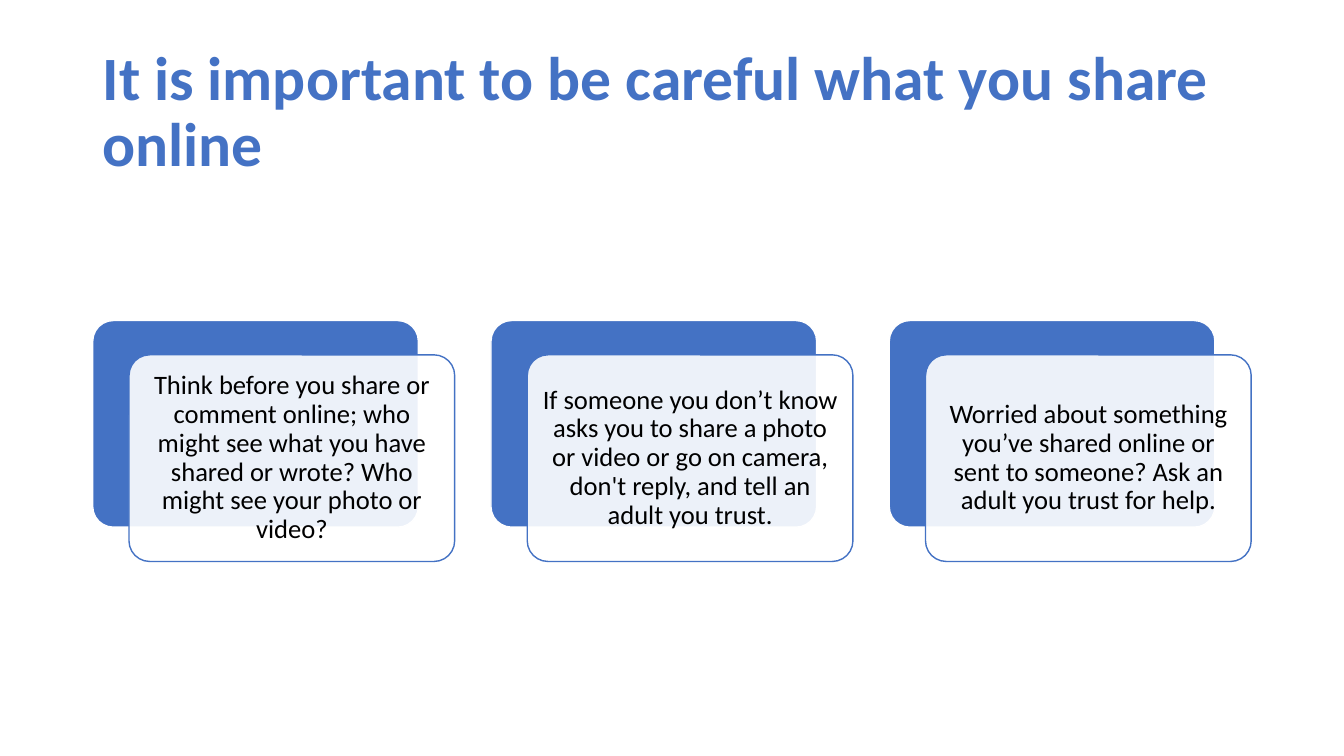
from pptx import Presentation
from pptx.dml.color import RGBColor
from pptx.enum.shapes import MSO_SHAPE
from pptx.enum.text import MSO_ANCHOR, PP_ALIGN
from pptx.oxml.ns import qn
from pptx.util import Inches, Pt
from lxml import etree

ROUNDED = MSO_SHAPE.ROUNDED_RECTANGLE
MIDDLE = MSO_ANCHOR.MIDDLE
LEFT, CENTER = PP_ALIGN.LEFT, PP_ALIGN.CENTER

FONT = "Calibri"
COLORS = {"blue": "4472C4", "white": "FFFFFF", "black": "000000"}
TITLE = "It is important to be careful what you share online"
TIPS = [
    "Think before you share or comment online; who might see what you have "
    "shared or wrote? Who might see your photo or video?",
    "If someone you don’t know asks you to share a photo or video or go on "
    "camera, don't reply, and tell an adult you trust.",
    "Worried about something you’ve shared online or sent to someone? "
    "Ask an adult you trust for help.",
]


def rgb(name):
    return RGBColor.from_string(COLORS[name])


def add_text(shapes, box, text, size, color, align=LEFT, bold=False, inset=None):
    tb = shapes.add_textbox(*map(Inches, box))
    tf = tb.text_frame
    tf.word_wrap = True
    tf.vertical_anchor = MIDDLE
    if inset is not None:
        tf.margin_left = tf.margin_right = Inches(inset)
        tf.margin_top = tf.margin_bottom = Inches(inset)
    p = tf.paragraphs[0]
    p.alignment = align
    p.line_spacing = 0.9
    r = p.add_run()
    r.text = text
    r.font.name = FONT
    r.font.size = Pt(size)
    r.font.bold = bold
    r.font.color.rgb = rgb(color)


def add_panel(shapes, box, fill, line, opacity=100):
    sp = shapes.add_shape(ROUNDED, *map(Inches, box))
    sp.adjustments[0] = 0.1
    sp.shadow.inherit = False
    sp.fill.solid()
    sp.fill.fore_color.rgb = rgb(fill)
    sp.line.color.rgb = rgb(line)
    sp.line.width = Pt(1)
    if opacity < 100:
        color = sp.fill._xPr.find(qn("a:solidFill"))[0]
        etree.SubElement(color, qn("a:alpha")).set("val", str(opacity * 1000))


def add_title(s, box):
    add_text(s.shapes, box, TITLE, 44, "blue", bold=True)


def add_tip_card(shapes, box, tip):
    x, y, w, h = box
    dx, dy, pad = 0.36, 0.34, 0.06
    pw, ph = w - dx, h - dy
    add_panel(shapes, (x, y, pw, ph), "blue", "white")
    add_panel(shapes, (x + dx, y + dy, pw, ph), "white", "blue", opacity=90)
    text_box = (x + dx + pad, y + dy + pad, pw - 2 * pad, ph - 2 * pad)
    add_text(shapes, text_box, tip, 19, "black", align=CENTER, inset=0.08)


def add_tip_cards(s, box):
    x, y, w, h = box
    gap = 0.36
    card_w = (w - gap * (len(TIPS) - 1)) / len(TIPS)
    group = s.shapes.add_group_shape()
    for i, tip in enumerate(TIPS):
        add_tip_card(group.shapes, (x + i * (card_w + gap), y, card_w, h), tip)


def main():
    prs = Presentation()
    prs.slide_width, prs.slide_height = Inches(13.33), Inches(7.5)
    s = prs.slides.add_slide(prs.slide_layouts[6])
    add_title(s, (0.92, 0.4, 11.5, 1.45))
    add_tip_cards(s, (0.92, 3.18, 11.49, 2.39))
    prs.save("out.pptx")


if __name__ == "__main__":
    main()
